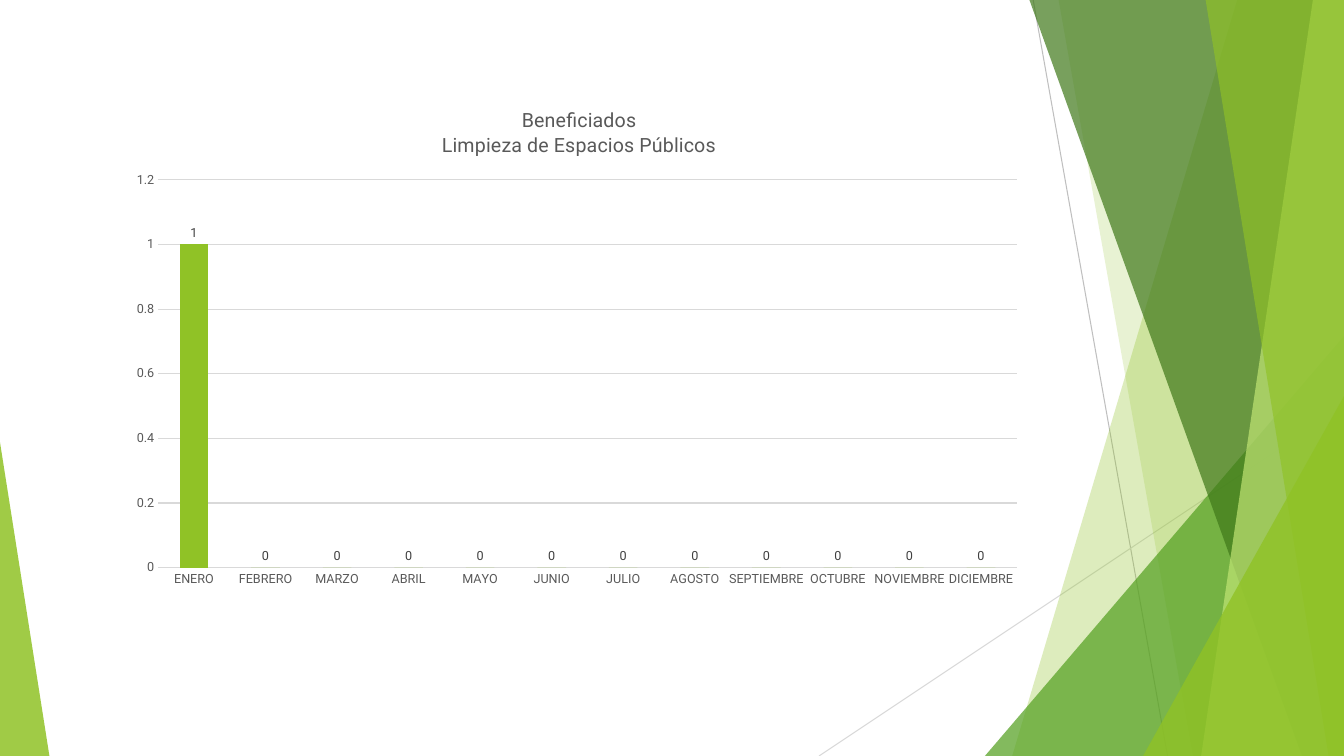
from dataclasses import dataclass

from lxml.etree import SubElement
from pptx import Presentation
from pptx.chart.data import CategoryChartData
from pptx.dml.color import RGBColor
from pptx.enum.chart import XL_CHART_TYPE as CT, XL_LABEL_POSITION as LP, XL_TICK_MARK as TM
from pptx.enum.shapes import MSO_CONNECTOR as CN, MSO_SHAPE as MS
from pptx.oxml import parse_xml
from pptx.oxml.ns import nsdecls, qn
from pptx.util import Pt

W, H = 960, 540
TOP = -0.6


@dataclass(frozen=True)
class Theme:
    font: str = "Roboto"
    lime: str = "90C226"
    leaf: str = "54A021"
    forest: str = "3F7819"
    pale: str = "C0E474"
    grid: str = "D9D9D9"
    rule: str = "BFBFBF"
    label: str = "404040"
    muted: str = "595959"
    title_size: float = 14
    base_size: float = 10
    small_size: float = 9
    line_width: float = 0.75


def rgb(value):
    return RGBColor.from_string(value)


def set_attrs(obj, values):
    for name, value in values.items():
        setattr(obj, name, value)


class Builder:
    def __init__(self, slide, theme):
        self.s, self.t = slide, theme

    def font(self, f, size, color):
        set_attrs(f, {"name": self.t.font, "size": Pt(size), "bold": False})
        f.color.rgb = rgb(color)

    def stroke(self, line, color):
        line.color.rgb = rgb(color)
        line.width = Pt(self.t.line_width)

    def line(self, x1, y1, x2, y2, color):
        cx = self.s.shapes.add_connector(CN.STRAIGHT, Pt(x1), Pt(y1), Pt(x2), Pt(y2))
        self.stroke(cx.line, color)
        SubElement(cx._element.spPr, qn("a:effectLst"))

    def paint(self, sp, color, opacity):
        sp.shadow.inherit = False
        sp.line.fill.background()
        sp.fill.solid()
        sp.fill.fore_color.rgb = rgb(color)
        clr = sp._element.spPr.find(qn("a:solidFill"))[0]
        SubElement(clr, qn("a:alpha"), val=str(opacity * 1000))

    def facet(self, top_x, bottom_x, color, opacity):
        fb = self.s.shapes.build_freeform(top_x, TOP, scale=Pt(1))
        fb.add_line_segments([(W, TOP), (W, H), (bottom_x, H)], close=True)
        self.paint(fb.convert_to_shape(), color, opacity)

    def triangle(self, x, y, w, apex, color, opacity):
        sp = self.s.shapes.add_shape(MS.ISOSCELES_TRIANGLE, Pt(x), Pt(y), Pt(w), Pt(H - y))
        sp.adjustments[0] = apex
        self.paint(sp, color, opacity)

    def layout(self, parent, index, **values):
        for old in parent.findall(qn("c:layout")):
            parent.remove(old)
        lay = parse_xml(f"<c:layout {nsdecls('c')}><c:manualLayout/></c:layout>")
        for name, value in values.items():
            SubElement(lay[0], qn(f"c:{name}"), val=str(value))
        parent.insert(index, lay)

    def axis(self, ax):
        set_attrs(ax, {"major_tick_mark": TM.NONE, "minor_tick_mark": TM.NONE})
        ax.format.line.fill.background()
        self.font(ax.tick_labels.font, self.t.small_size, self.t.muted)

    def columns(self, x, y, w, h, title, cats, vals):
        t = self.t
        data = CategoryChartData()
        data.categories = cats
        data.add_series("Series 1", vals)
        frame = self.s.shapes.add_chart(CT.COLUMN_CLUSTERED, Pt(x), Pt(y), Pt(w), Pt(h), data)
        ch = frame.chart
        set_attrs(ch, {"has_legend": False, "has_title": True})
        self.font(ch.font, t.base_size, "000000")
        tf = ch.chart_title.text_frame
        tf.text = title
        for p in tf.paragraphs:
            self.font(p.runs[0].font, t.title_size, t.muted)
        self.layout(ch.chart_title._element, 1, xMode="edge", yMode="edge", x=0.35, y=0.03)
        self.layout(ch._chartSpace.chart.plotArea, 0, layoutTarget="inner", xMode="edge",
                    yMode="edge", x=0.044, y=0.179, w=0.936, h=0.762)

        for ax in (ch.category_axis, ch.value_axis):
            self.axis(ax)
        set_attrs(ch.value_axis, {"minimum_scale": 0, "maximum_scale": 1.2,
                                  "major_unit": 0.2, "has_major_gridlines": True})
        self.stroke(ch.value_axis.major_gridlines.format.line, t.grid)

        plot = ch.plots[0]
        set_attrs(plot, {"gap_width": 150, "vary_by_categories": False,
                         "has_data_labels": True})
        set_attrs(plot.data_labels, {"show_value": True, "position": LP.OUTSIDE_END})
        self.font(plot.data_labels.font, t.small_size, t.label)
        fill = plot.series[0].format.fill
        fill.solid()
        fill.fore_color.rgb = rgb(t.lime)


def main():
    prs = Presentation()
    set_attrs(prs, {"slide_width": Pt(W), "slide_height": Pt(H)})
    t = Theme()
    b = Builder(prs.slides.add_slide(prs.slide_layouts[6]), t)

    b.line(738, 0, 834, H, t.rule)
    b.line(W, 290, 585, H, t.grid)
    b.facet(884.2, 722.9, t.lime, 30)
    b.facet(756, 851.8, t.lime, 20)
    b.triangle(703.5, 240, 256.5, 1, t.leaf, 72)
    b.facet(735.1, 929.5, t.forest, 70)
    b.facet(938.2, 858.2, t.pale, 70)
    b.facet(861.1, 949, t.lime, 65)
    b.triangle(816.5, 283, 143.5, 1, t.lime, 80)
    b.triangle(0, 316, 35.3, 0, t.lime, 85)

    months = ["ENERO", "FEBRERO", "MARZO", "ABRIL", "MAYO", "JUNIO", "JULIO", "AGOSTO",
              "SEPTIEMBRE", "OCTUBRE", "NOVIEMBRE", "DICIEMBRE"]
    b.columns(84.2, 63.4, 655.2, 363.6, "Beneficiados\nLimpieza de Espacios Públicos",
              months, [1] + [0] * 11)
    prs.save("out.pptx")


if __name__ == "__main__":
    main()
